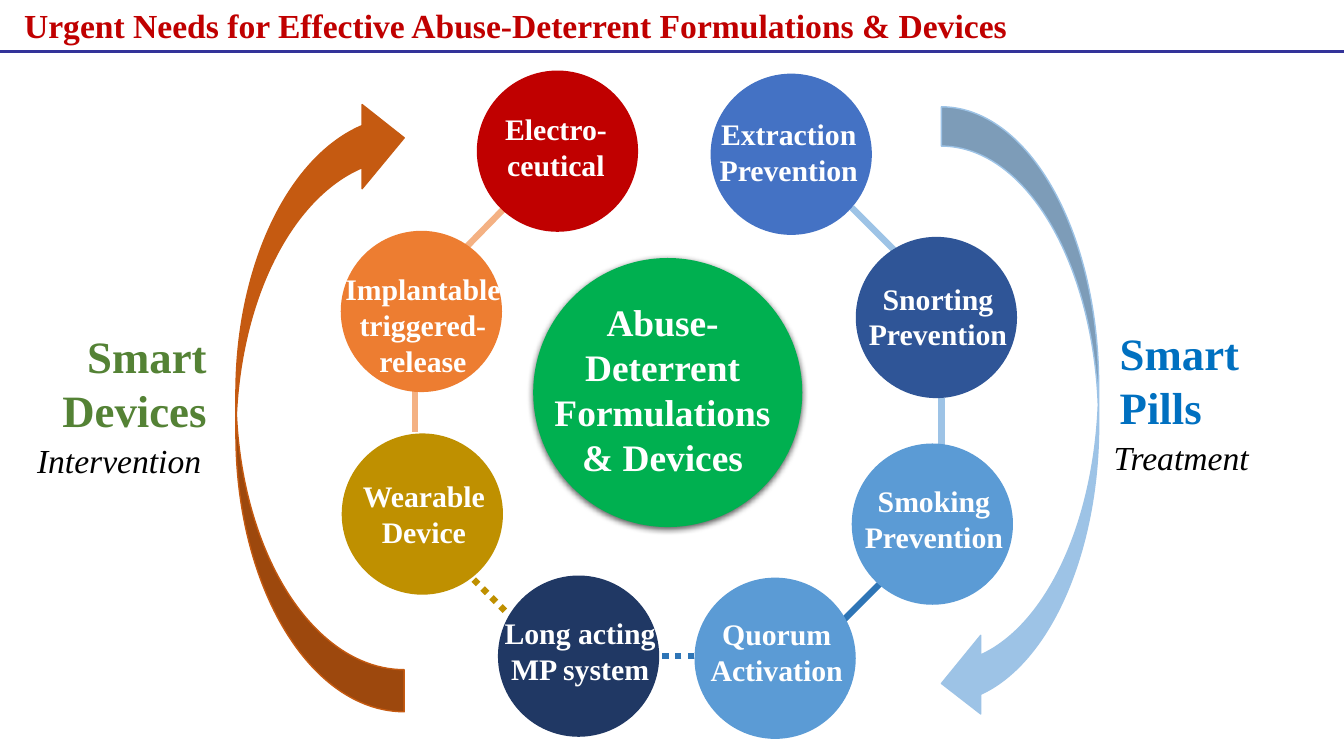
from dataclasses import dataclass
from typing import NamedTuple

from lxml.etree import SubElement
from pptx import Presentation
from pptx.dml.color import RGBColor
from pptx.enum.dml import MSO_LINE
from pptx.enum.shapes import MSO_CONNECTOR, MSO_SHAPE
from pptx.enum.text import MSO_ANCHOR, MSO_AUTO_SIZE, PP_ALIGN
from pptx.oxml.ns import qn
from pptx.util import Pt


@dataclass(frozen=True)
class Theme:
    font: str = "Times New Roman"
    white: str = "FFFFFF"
    black: str = "000000"
    red: str = "C00000"
    rule: str = "333399"
    green: str = "00B050"
    moss: str = "548235"
    azure: str = "0070C0"
    royal: str = "4472C4"
    cobalt: str = "2F5597"
    sky: str = "5B9BD5"
    pale: str = "9DC3E6"
    steel: str = "2E75B6"
    navy: str = "203864"
    gold: str = "BF9000"
    orange: str = "ED7D31"
    peach: str = "F4B183"
    rust: str = "C55A11"
    title: float = 24
    core: float = 26.7
    node: float = 21.3
    side: float = 32
    note: float = 24


class Box(NamedTuple):
    x: float
    y: float
    w: float
    h: float


class Style(NamedTuple):
    size: float
    color: str
    align: PP_ALIGN = PP_ALIGN.LEFT
    bold: bool = True


class Node(NamedTuple):
    text: str
    x: float
    y: float
    fill: str
    drop: float
    shift: float = -10.8


class Link(NamedTuple):
    x1: float
    y1: float
    x2: float
    y2: float
    color: str
    dots: bool = False
    width: float = 4.5


class Label(NamedTuple):
    text: str
    box: Box
    style: Style
    wrap: bool = True


class Arrow(NamedTuple):
    box: Box
    color: str
    turn: float


T = Theme()
SIZE = 115.2
NODE_W = 139
NODE_H = 59
CENTER = PP_ALIGN.CENTER

NODES = [
    Node("Electro-ceutical", 340.6, 50.4, T.red, 25.2, -13),
    Node("Extraction Prevention", 507.6, 52.6, T.royal, 26.6, -13.7),
    Node("Snorting Prevention", 611.3, 169.2, T.cobalt, 27.4),
    Node("Smoking Prevention", 608.4, 316.8, T.sky, 24.5),
    Node("Quorum Activation", 496.1, 412.6, T.sky, 23.7),
    Node("Long acting MP system", 355.7, 411.1, T.navy, 24.5),
    Node("Wearable\nDevice", 244.1, 309.6, T.gold, 28.1),
    Node("Implantable triggered-\nrelease", 243.4, 164.9, T.orange, 25.2),
]
LINKS = [
    Link(0, 36.7, 960, 36.7, T.rule, width=2.25),
    Link(608.4, 148.3, 640.8, 180.7, T.pale),
    Link(672.5, 284.4, 672.5, 324.7, T.pale),
    Link(632.9, 412.6, 600.5, 445, T.steel),
    Link(504.7, 468.7, 464.4, 468.7, T.steel, True),
    Link(360.7, 436.3, 329, 404.6, T.gold, True),
    Link(296.6, 268.6, 296.6, 308.9, T.peach),
    Link(360.7, 148.3, 329, 180.7, T.peach),
]
ARROWS = [
    Arrow(Box(672.5, 76.3, 112.3, 440), T.pale, 0),
    Arrow(Box(168.5, 68.4, 120.2, 440), T.rust, 180),
]
NOTE = Style(T.note, T.black, bold=False)
LABELS = [
    Label("Abuse-Deterrent Formulations & Devices",
          Box(386.6, 210.2, 173.5, 136.8), Style(T.core, T.white, CENTER)),
    Label("Smart Devices", Box(25.2, 231.1, 129.6, 85),
          Style(T.side, T.moss, PP_ALIGN.RIGHT)),
    Label("Intervention", Box(19.4, 311, 132.5, 36), NOTE, False),
    Label("Smart Pills", Box(792.7, 229, 136.1, 85), Style(T.side, T.azure)),
    Label("Treatment", Box(788.4, 308.9, 111.6, 36), NOTE, False),
]


def spots(box: Box) -> list:
    return [Pt(v) for v in box]


def write(frame, text: str, style: Style, wrap: bool = True) -> None:
    frame.text = text
    frame.word_wrap = wrap
    frame.auto_size = MSO_AUTO_SIZE.NONE
    frame.vertical_anchor = MSO_ANCHOR.TOP
    for para in frame.paragraphs:
        para.alignment = style.align
        font = para.font
        font.name = T.font
        font.size = Pt(style.size)
        font.bold = style.bold
        font.italic = not style.bold
        font.color.rgb = RGBColor.from_string(style.color)


def draw_title(slide, text: str) -> None:
    title = slide.shapes.title
    title.left, title.top, title.width, title.height = spots(Box(10, 0, 885, 39))
    write(title.text_frame, text, Style(T.title, T.red))


def draw_label(slide, label: Label) -> None:
    box = slide.shapes.add_textbox(*spots(label.box))
    write(box.text_frame, label.text, label.style, label.wrap)


def draw_link(slide, link: Link) -> None:
    line = slide.shapes.add_connector(MSO_CONNECTOR.STRAIGHT, *map(Pt, link[:4]))
    line.line.color.rgb = RGBColor.from_string(link.color)
    line.line.width = Pt(link.width)
    if link.dots:
        line.line.dash_style = MSO_LINE.ROUND_DOT
    SubElement(line._element.spPr, qn("a:effectLst"))


def draw_shape(slide, kind: MSO_SHAPE, box: Box, color: str):
    shape = slide.shapes.add_shape(kind, *spots(box))
    shape.shadow.inherit = False
    shape.fill.solid()
    shape.fill.fore_color.rgb = RGBColor.from_string(color)
    shape.line.fill.background()
    return shape


def draw_arrow(slide, arrow: Arrow) -> None:
    shape = draw_shape(slide, MSO_SHAPE.CURVED_LEFT_ARROW, arrow.box, arrow.color)
    shape.rotation = arrow.turn
    shape.line.color.rgb = RGBColor.from_string(arrow.color)
    shape.line.width = Pt(1)


def draw_core(slide) -> None:
    core = draw_shape(slide, MSO_SHAPE.OVAL, Box(380.9, 184.3, 192.2, 192.2), T.green)
    glow = SubElement(core._element.spPr.find(qn("a:effectLst")), qn("a:outerShdw"),
                      blurRad=str(Pt(4.5)), dist=str(Pt(1.5)), dir="5400000",
                      algn="ctr", rotWithShape="0")
    tint = SubElement(glow, qn("a:srgbClr"), val=T.black)
    SubElement(tint, qn("a:alpha"), val="63000")


def draw_node(slide, node: Node) -> None:
    draw_shape(slide, MSO_SHAPE.OVAL, Box(node.x, node.y, SIZE, SIZE), node.fill)
    box = Box(node.x + node.shift, node.y + node.drop, NODE_W, NODE_H)
    draw_label(slide, Label(node.text, box, Style(T.node, T.white, CENTER)))


def main() -> None:
    deck = Presentation()
    deck.slide_width, deck.slide_height = Pt(960), Pt(540)
    slide = deck.slides.add_slide(deck.slide_layouts[5])
    draw_title(slide, "Urgent Needs for Effective Abuse-Deterrent Formulations & Devices")
    draw_core(slide)
    for draw, items in ((draw_arrow, ARROWS), (draw_label, LABELS),
                        (draw_link, LINKS), (draw_node, NODES)):
        for item in items:
            draw(slide, item)
    deck.save("out.pptx")


if __name__ == "__main__":
    main()
